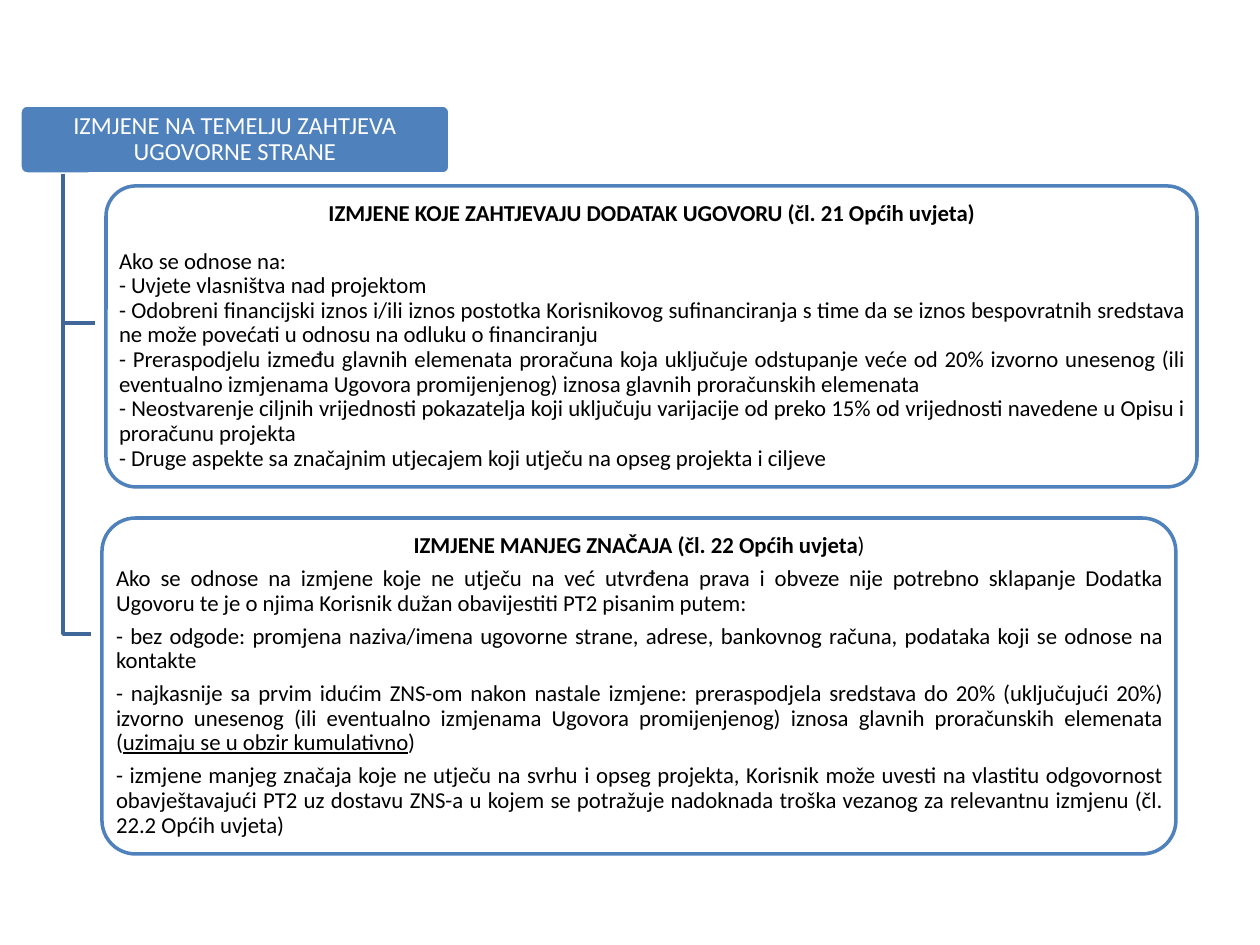
from lxml.etree import SubElement
from pptx import Presentation
from pptx.dml.color import RGBColor
from pptx.enum.shapes import MSO_SHAPE as Preset
from pptx.enum.text import MSO_ANCHOR as Anchor, MSO_AUTO_SIZE as AutoSize, PP_ALIGN as Align
from pptx.oxml.ns import qn
from pptx.util import Pt

PX = 914400 // 126
BLUE, LINK, WHITE, BLACK = "4F81BD", "3F6797", "FFFFFF", "000000"
FONT = "Calibri"

# Content: a paragraph is a list of (text, style) runs
TITLE = "IZMJENE NA TEMELJU ZAHTJEVA UGOVORNE STRANE"
HEADER = (20, 105, 430, 69)
TRUNK_X = 63
PANELS = [
    dict(
        frame=(106, 186, 1091, 301), branch=(95, 323), gaps=(13, 0),
        heading=[("IZMJENE KOJE ZAHTJEVAJU DODATAK UGOVORU (čl. 21 Općih uvjeta)", "bold")],
        body=[
            [("Ako se odnose na:", "")],
            [("- Uvjete vlasništva nad projektom", "")],
            [("- Odobreni financijski iznos i/ili iznos postotka Korisnikovog sufinanciranja s time "
              "da se iznos bespovratnih sredstava ne može povećati u odnosu na odluku o "
              "financiranju", "")],
            [("- Preraspodjelu između glavnih elemenata proračuna koja uključuje odstupanje veće od "
              "20% izvorno unesenog (ili eventualno izmjenama Ugovora promijenjenog) iznosa "
              "glavnih proračunskih elemenata", "")],
            [("- Neostvarenje ciljnih vrijednosti pokazatelja koji uključuju varijacije od preko 15% "
              "od vrijednosti navedene u Opisu i proračunu projekta", "")],
            [("- Druge aspekte sa značajnim utjecajem koji utječu na opseg projekta i ciljeve", "")],
        ],
    ),
    dict(
        frame=(102, 518, 1074, 336), branch=(91, 634), gaps=(4.8, 4.8),
        heading=[("IZMJENE MANJEG ZNAČAJA (čl. 22 Općih uvjeta", "bold"), (")", "")],
        body=[
            [("Ako se odnose na izmjene koje ne utječu na već utvrđena prava i obveze nije potrebno "
              "sklapanje Dodatka Ugovoru te je o njima Korisnik dužan obavijestiti PT2 pisanim "
              "putem:", "")],
            [("- bez odgode: promjena naziva/imena ugovorne strane, adrese, bankovnog računa, "
              "podataka koji se odnose na kontakte", "")],
            [("- najkasnije sa prvim idućim ZNS-om nakon nastale izmjene: preraspodjela sredstava do "
              "20% (uključujući 20%) izvorno unesenog (ili eventualno izmjenama Ugovora "
              "promijenjenog) iznosa glavnih proračunskih elemenata (", ""),
             ("uzimaju se u obzir kumulativno", "underline"), (")", "")],
            [("- izmjene manjeg značaja koje ne utječu na svrhu i opseg projekta, Korisnik može "
              "uvesti na vlastitu odgovornost obavještavajući PT2 uz dostavu ZNS-a u kojem se "
              "potražuje nadoknada troška vezanog za relevantnu izmjenu (čl. 22.2 Općih uvjeta)",
              "")],
        ],
    ),
]


def color(value):
    return RGBColor.from_string(value)


def set_line(shape, value):
    shape.line.color.rgb = color(value)
    shape.line.width = Pt(2)
    shape.shadow.inherit = False


def add_frame(slide, box, fill, line, opacity=100):
    shape = slide.shapes.add_shape(Preset.ROUNDED_RECTANGLE, *(v * PX for v in box))
    shape.adjustments[0] = 0.1
    shape.fill.solid()
    shape.fill.fore_color.rgb = color(fill)
    if opacity < 100:
        fill_color = shape.element.spPr.find(qn("a:solidFill"))[0]
        SubElement(fill_color, qn("a:alpha"), val=str(opacity * 1000))
    set_line(shape, line)


def add_branch(slide, start_y, end):
    builder = slide.shapes.build_freeform(TRUNK_X, start_y, scale=PX)
    builder.add_line_segments([(TRUNK_X, end[1]), end], close=False)
    branch = builder.convert_to_shape()
    branch.fill.background()
    set_line(branch, LINK)


def place_text(placeholder, box, inset):
    """Put a placeholder inside its frame, in front of it."""
    left, top, width, height = box
    placeholder.left, placeholder.top = (left + inset) * PX, (top + inset) * PX
    placeholder.width, placeholder.height = (width - 2 * inset) * PX, (height - 2 * inset) * PX
    placeholder.element.getparent().append(placeholder.element)
    frame = placeholder.text_frame
    frame.auto_size = AutoSize.NONE
    frame.word_wrap = True
    frame.vertical_anchor = Anchor.MIDDLE
    frame.margin_left = frame.margin_right = 4 * PX
    frame.margin_top = frame.margin_bottom = 3 * PX
    return frame


def write(paragraph, runs, size, value, align, gap=0):
    properties = paragraph._p.get_or_add_pPr()
    properties.set("marL", "0")
    properties.set("indent", "0")
    SubElement(properties, qn("a:buNone"))
    paragraph.alignment = align
    paragraph.line_spacing = 0.9
    paragraph.space_before = Pt(0)
    paragraph.space_after = Pt(gap)
    for text, style in runs:
        run = paragraph.add_run()
        run.text = text
        font = run.font
        font.name, font.size = FONT, Pt(size)
        font.color.rgb = color(value)
        font.bold = style == "bold"
        font.underline = style == "underline"


def main():
    presentation = Presentation()
    presentation.slide_width, presentation.slide_height = 1260 * PX, 945 * PX
    slide = presentation.slides.add_slide(presentation.slide_layouts.get_by_name("Two Content"))
    title, *bodies = list(slide.placeholders)[:3]

    # Header
    add_frame(slide, HEADER, BLUE, WHITE)
    frame = place_text(title, HEADER, 2)
    write(frame.paragraphs[0], [(TITLE, "")], 14, WHITE, Align.CENTER)

    # Panels with their branches
    for panel, body in zip(PANELS, bodies):
        box = panel["frame"]
        add_branch(slide, HEADER[1] + HEADER[3], panel["branch"])
        add_frame(slide, box, WHITE, BLUE, opacity=90)
        frame = place_text(body, box, round(box[3] * 0.03))
        heading_gap, body_gap = panel["gaps"]
        write(frame.paragraphs[0], panel["heading"], 13, BLACK, Align.CENTER, heading_gap)
        for runs in panel["body"]:
            write(frame.add_paragraph(), runs, 13, BLACK, Align.JUSTIFY, body_gap)

    presentation.save("out.pptx")


if __name__ == "__main__":
    main()
